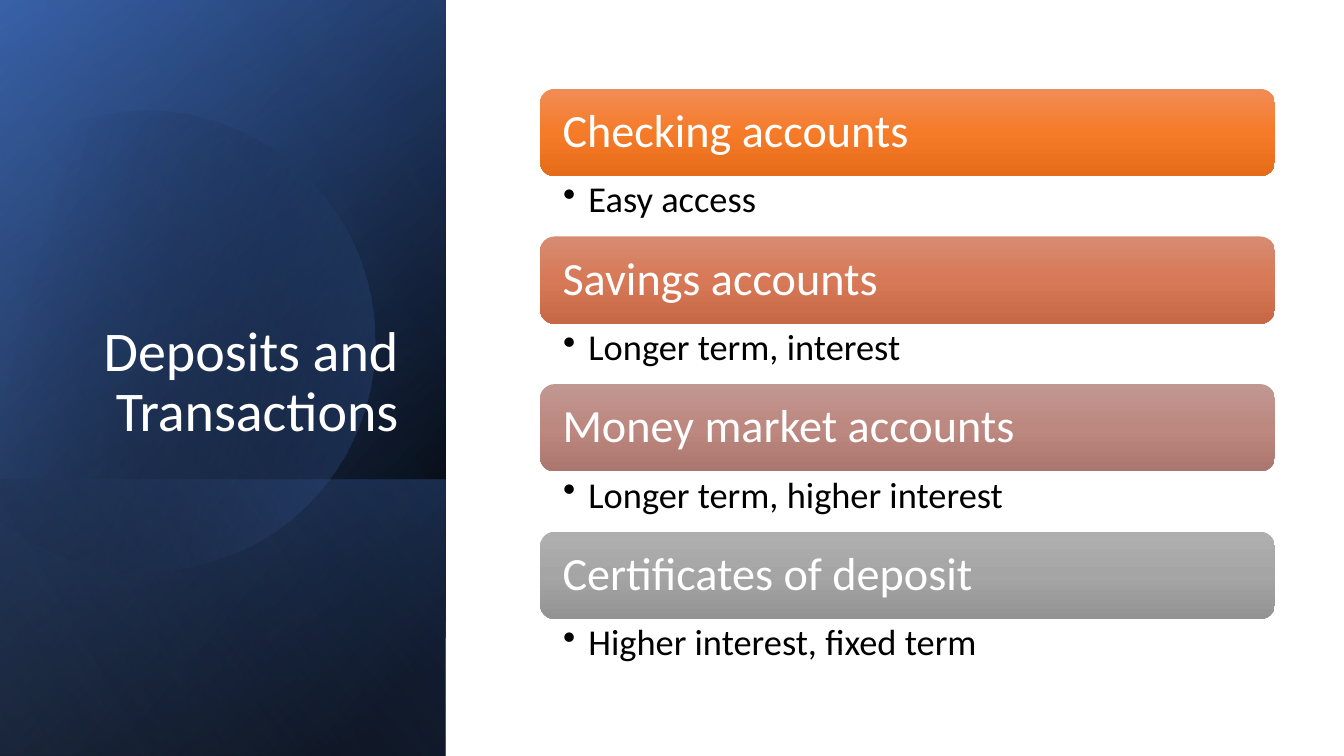
from dataclasses import dataclass
from math import cos, radians, sin

from lxml import etree
from pptx import Presentation
from pptx.dml.color import RGBColor
from pptx.enum.shapes import MSO_SHAPE as SHAPE
from pptx.enum.text import MSO_ANCHOR as ANCHOR, PP_ALIGN as ALIGN
from pptx.oxml import parse_xml
from pptx.oxml.ns import nsdecls, qn
from pptx.util import Cm, Pt


@dataclass(frozen=True)
class Theme:
    font: str = "Calibri"
    title_size: int = 40
    bar_size: int = 33
    detail_size: int = 26
    light: str = "FFFFFF"
    dark: str = "000000"
    blue: str = "4472C4"
    deep_blue: str = "2F5597"
    pale_blue: str = "8FAADC"
    bars: tuple = (
        ("F18C57", "F67B28", "E56C19"),
        ("D78B72", "D77956", "C66846"),
        ("C19791", "BC8880", "AA766E"),
        ("AFAFAF", "A5A5A5", "939393"),
    )


ACCOUNTS = (
    ("Checking accounts", "Easy access"),
    ("Savings accounts", "Longer term, interest"),
    ("Money market accounts", "Longer term, higher interest"),
    ("Certificates of deposit", "Higher interest, fixed term"),
)

# Each segment of the disc is a line (one point) or a Bézier curve (three points).
DISC_START = (3.78, 2.79)
DISC_SEGMENTS = (
    ((6.25, 2.84), (8.51, 4.5), (9.22, 6.99)),
    ((10.11, 10.08), (8.33, 13.31), (5.26, 14.17)),
    ((3.33, 14.73), (1.35, 14.25), (-0.08, 13.06)),
    ((-0.38, 12.78),),
    ((-0.38, 4.45),),
    ((0, 4.09),),
    ((0.58, 3.61), (1.27, 3.23), (2.03, 3.02)),
    ((2.62, 2.87), (3.2, 2.79), DISC_START),
)
DISC_CENTER = (4.03, 8.5)
DISC_TILT = 16.1


def outline(start, segments, steps=16):
    """Return the points of a path, with its curves sampled."""
    points = [start]
    for seg in segments:
        if len(seg) == 1:
            points.append(seg[0])
            continue
        p0, (p1, p2, p3) = points[-1], seg
        for i in range(1, steps + 1):
            t = i / steps
            u = 1 - t
            points.append(tuple(
                u**3 * a + 3 * u * u * t * b + 3 * u * t * t * c + t**3 * d
                for a, b, c, d in zip(p0, p1, p2, p3)))
    return points


def turn(point, center, degrees):
    x, y = point[0] - center[0], point[1] - center[1]
    c, s = cos(radians(degrees)), sin(radians(degrees))
    return center[0] + x * c - y * s, center[1] + x * s + y * c


class SlideBuilder:
    def __init__(self, prs, theme):
        self.theme = theme
        self.slide = prs.slides.add_slide(prs.slide_layouts[5])
        self.shapes = self.slide.shapes

    def paint(self, sp, stops, angle):
        """Fill with a gradient of (position, colour, opacity) stops in percent."""
        sp.shadow.inherit = False
        sp.line.fill.background()
        sp.fill.background()
        grad = parse_xml(f'<a:gradFill {nsdecls("a")}><a:gsLst/>'
                         f'<a:lin ang="{angle * 60000}" scaled="0"/></a:gradFill>')
        for pos, color, opacity in stops:
            gs = etree.SubElement(grad[0], qn("a:gs"), pos=str(pos * 1000))
            clr = etree.SubElement(gs, qn("a:srgbClr"), val=color)
            if opacity < 100:
                etree.SubElement(clr, qn("a:alpha"), val=str(opacity * 1000))
        sp_pr = sp._element.spPr
        sp_pr.replace(sp_pr.find(qn("a:noFill")), grad)

    def panel(self, box, stops, angle):
        sp = self.shapes.add_shape(SHAPE.RECTANGLE, *map(Cm, box))
        sp.rotation = 90
        sp._element.spPr.get_or_add_xfrm().set("flipH", "1")
        self.paint(sp, stops, angle)

    def disc(self, stops, angle):
        points = [tuple(map(Cm, turn(p, DISC_CENTER, DISC_TILT)))
                  for p in outline(DISC_START, DISC_SEGMENTS)]
        builder = self.shapes.build_freeform(*points[0])
        builder.add_line_segments(points[1:], close=True)
        sp = builder.convert_to_shape()
        sp.rotation = -DISC_TILT
        self.paint(sp, stops, angle)

    def set_text(self, sp, text, size, color, align=ALIGN.LEFT,
                 anchor=ANCHOR.TOP, insets=(0.25, 0.13, 0.25, 0.13)):
        tf = sp.text_frame
        tf.word_wrap = True
        tf.vertical_anchor = anchor
        (tf.margin_left, tf.margin_top,
         tf.margin_right, tf.margin_bottom) = map(Cm, insets)
        p = tf.paragraphs[0]
        p.text = text
        p.alignment = align
        p.line_spacing = 0.9
        p.font.name = self.theme.font
        p.font.size = Pt(size)
        p.font.color.rgb = RGBColor.from_string(color)
        return p

    def title(self, box, text):
        sp = self.shapes.title
        sp.left, sp.top, sp.width, sp.height = map(Cm, box)
        self.set_text(sp, text, self.theme.title_size, self.theme.light,
                      ALIGN.RIGHT, ANCHOR.BOTTOM)
        self.shapes._spTree.append(sp._element)  # in front of the panels

    def bar(self, box, text, colors):
        sp = self.shapes.add_shape(SHAPE.ROUNDED_RECTANGLE, *map(Cm, box))
        self.paint(sp, [(i * 50, c, 100) for i, c in enumerate(colors)], 90)
        self.set_text(sp, text, self.theme.bar_size, self.theme.light,
                      anchor=ANCHOR.MIDDLE, insets=(0.46, 0.36, 0.46, 0.36))

    def detail(self, box, text):
        sp = self.shapes.add_textbox(*map(Cm, box))
        p = self.set_text(sp, text, self.theme.detail_size, self.theme.dark,
                          insets=(0.58, 0.13, 0.66, 0.13))
        p_pr = p._p.get_or_add_pPr()
        indent = Cm(0.64)
        p_pr.set("marL", str(indent))
        p_pr.set("indent", str(-indent))
        bullet = parse_xml(f'<a:buChar {nsdecls("a")} char="•"/>')
        p_pr.insert_element_before(bullet, "a:tabLst", "a:defRPr", "a:extLst")


def main():
    prs = Presentation()
    prs.slide_width, prs.slide_height = Cm(33.87), Cm(19.05)
    th = Theme()
    s = SlideBuilder(prs, th)

    side = (-3.91, 3.91, 19.05, 11.23)
    s.panel(side, [(8, th.dark, 100), (100, th.deep_blue, 100)], 50)
    s.panel(side, [(0, th.dark, 0), (99, th.blue, 46)], 30)
    s.panel((2.13, 9.96, 6.96, 11.23), [(2, th.blue, 29), (100, th.dark, 30)], 130)
    s.disc([(29, th.dark, 0), (100, th.blue, 43)], 30)
    s.panel(side, [(0, th.dark, 0), (99, th.pale_blue, 11)], 120)
    s.title((1.63, 4.67, 8.66, 6.65), "Deposits and Transactions")

    left, top, width, pitch = 13.61, 2.24, 18.52, 3.72
    bar_height, detail_height = 2.2, 1.52
    for i, ((name, note), colors) in enumerate(zip(ACCOUNTS, th.bars)):
        y = top + i * pitch
        s.bar((left, y, width, bar_height), name, colors)
        s.detail((left, y + bar_height, width, detail_height), note)

    prs.save("out.pptx")


if __name__ == "__main__":
    main()
